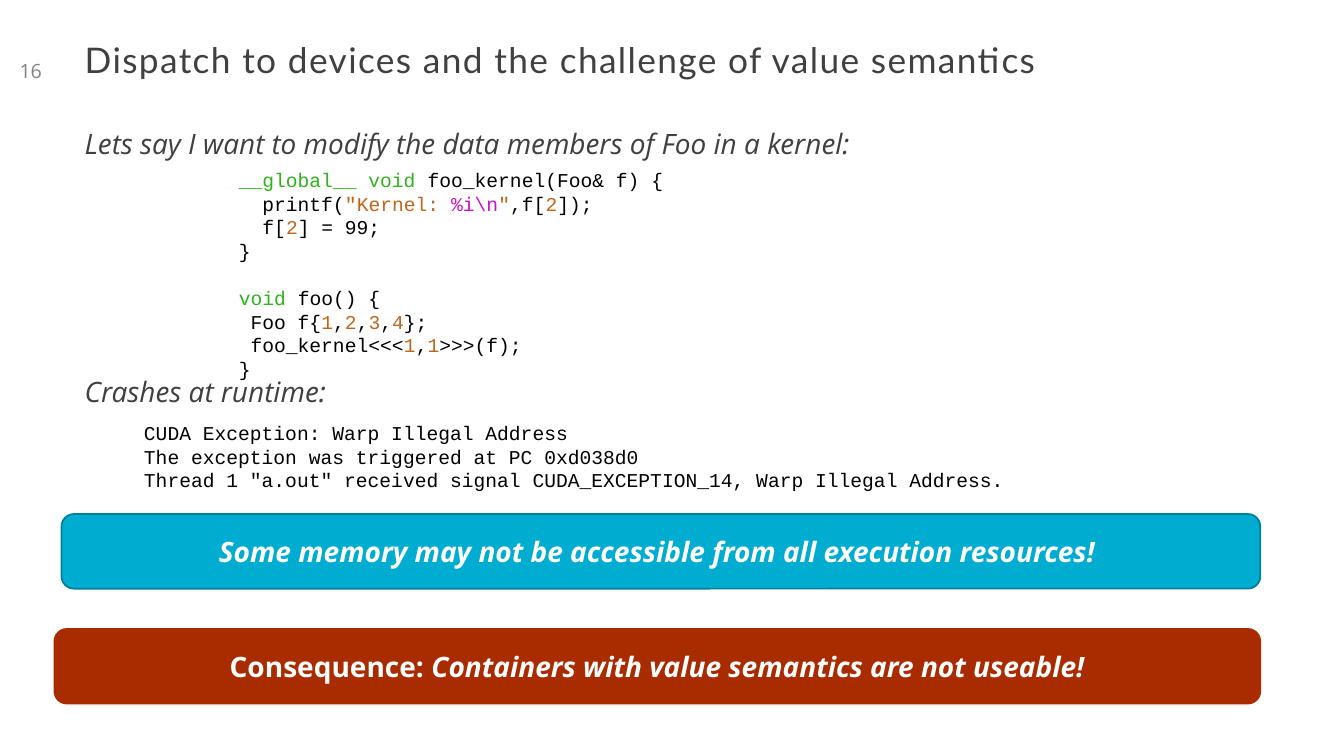
from pptx import Presentation
from pptx.dml.color import RGBColor
from pptx.enum.shapes import MSO_SHAPE
from pptx.enum.text import MSO_ANCHOR, PP_ALIGN
from pptx.util import Inches, Pt

ROUNDED = MSO_SHAPE.ROUNDED_RECTANGLE
TOP, MIDDLE = MSO_ANCHOR.TOP, MSO_ANCHOR.MIDDLE
LEFT, CENTER = PP_ALIGN.LEFT, PP_ALIGN.CENTER

BODY, HEADING, MONO = "Open Sans", "Lato", "Courier New"
INK, GREY, BLACK, WHITE = "404040", "808080", "000000", "FFFFFF"
KEYWORD, LITERAL, FORMAT = "2FB41D", "C1651C", "C814C9"
CODE_LINE = Pt(16.8)

# Each code line is a list of (text, colour) pieces.
KERNEL_CODE = [
    [("__global__ void ", KEYWORD), ("foo_kernel(Foo& f) {", BLACK)],
    [("  printf(", BLACK), ('"Kernel: ', LITERAL), ("%i\\n", FORMAT), ('"', LITERAL),
     (",f[", BLACK), ("2", LITERAL), ("]);", BLACK)],
    [("  f[", BLACK), ("2", LITERAL), ("] = 99;", BLACK)],
    [("}", BLACK)],
]
CALLER_CODE = [
    [("void", KEYWORD), (" foo() {", BLACK)],
    [(" Foo f{", BLACK), ("1", LITERAL), (",", BLACK), ("2", LITERAL), (",", BLACK),
     ("3", LITERAL), (",", BLACK), ("4", LITERAL), ("};", BLACK)],
    [(" foo_kernel<<<", BLACK), ("1", LITERAL), (",", BLACK), ("1", LITERAL),
     (">>>(f);", BLACK)],
    [("}", BLACK)],
]
CRASH_OUTPUT = [
    [("CUDA Exception: Warp Illegal Address", BLACK)],
    [("The exception was triggered at PC 0xd038d0", BLACK)],
    [('Thread 1 "a.out" received signal CUDA_EXCEPTION_14, Warp Illegal Address.', BLACK)],
]


def rgb(color):
    return RGBColor.from_string(color)


class SlideBuilder:
    def __init__(self, slide):
        self.slide = slide

    def frame(self, left, top, width, height, inset=0.05, anchor=TOP):
        """Add an empty wrapping text box and return its text frame."""
        box = self.slide.shapes.add_textbox(
            Inches(left), Inches(top), Inches(width), Inches(height))
        frame = box.text_frame
        frame.word_wrap = True
        frame.vertical_anchor = anchor
        frame.margin_left = frame.margin_right = Inches(inset)
        frame.margin_top = frame.margin_bottom = Inches(0.05)
        return frame

    def style(self, paragraph, font, size, color):
        paragraph.font.name = font
        paragraph.font.size = Pt(size)
        paragraph.font.color.rgb = rgb(color)

    def line(self, text, place, font=BODY, size=20, color=INK, italic=False,
             align=LEFT, anchor=TOP, spacing=1.0, tracking=0):
        """Add a one-line text; tracking is in points."""
        paragraph = self.frame(*place, anchor=anchor).paragraphs[0]
        run = paragraph.add_run()
        run.text = text
        self.style(paragraph, font, size, color)
        paragraph.font.italic = italic
        paragraph.alignment = align
        paragraph.line_spacing = spacing
        if tracking:
            run.font._element.set("spc", str(tracking * 100))

    def code(self, blocks, place):
        """Add monospaced blocks, one line apart."""
        frame = self.frame(*place, inset=0.1)
        paragraph = None
        for block_index, block in enumerate(blocks):
            for line_index, pieces in enumerate(block):
                paragraph = frame.add_paragraph() if paragraph else frame.paragraphs[0]
                self.style(paragraph, MONO, 14, BLACK)
                paragraph.line_spacing = CODE_LINE
                if block_index and not line_index:
                    paragraph.space_before = CODE_LINE
                for text, color in pieces:
                    run = paragraph.add_run()
                    run.text = text
                    if color != BLACK:
                        run.font.color.rgb = rgb(color)

    def banner(self, pieces, place, fill, outline):
        """Add a rounded bar holding (text, italic) pieces."""
        bar = self.slide.shapes.add_shape(ROUNDED, *map(Inches, place))
        bar.shadow.inherit = False
        bar.fill.solid()
        bar.fill.fore_color.rgb = rgb(fill)
        bar.line.color.rgb = rgb(outline)
        bar.line.width = Pt(1.25)
        bar.text_frame.vertical_anchor = MIDDLE
        paragraph = bar.text_frame.paragraphs[0]
        paragraph.alignment = CENTER
        self.style(paragraph, BODY, 20, WHITE)
        paragraph.font.bold = True
        for text, italic in pieces:
            run = paragraph.add_run()
            run.text = text
            run.font.italic = italic


def main():
    deck = Presentation()
    deck.slide_width, deck.slide_height = Inches(13.33), Inches(7.5)
    builder = SlideBuilder(deck.slides.add_slide(deck.slide_layouts[6]))

    builder.line("Dispatch to devices and the challenge of value semantics",
                 (0.79, 0.39, 11.46, 0.62), font=HEADING, size=25.2,
                 spacing=0.85, tracking=1)
    builder.line("Lets say I want to modify the data members of Foo in a kernel:",
                 (0.79, 1.21, 11.46, 0.62), italic=True)
    builder.line("16", (0, 0.39, 0.61, 0.62), size=14, color=GREY,
                 align=CENTER, anchor=MIDDLE)
    builder.code([CRASH_OUTPUT], (1.33, 4.13, 11.63, 0.8))
    builder.code([KERNEL_CODE, CALLER_CODE], (2.27, 1.62, 9.48, 2.2))
    builder.line("Crashes at runtime:", (0.79, 3.7, 11.46, 0.42),
                 italic=True, spacing=0.9)
    builder.banner([("Consequence: ", False),
                    ("Containers with value semantics are not useable!", True)],
                   (0.54, 6.24, 11.96, 0.74), "A92C00", "A92C00")
    builder.banner([("Some memory may not be accessible from all execution resources! ", True)],
                   (0.61, 5.1, 11.89, 0.74), "00ADD0", "00809A")
    deck.save("out.pptx")


if __name__ == "__main__":
    main()
